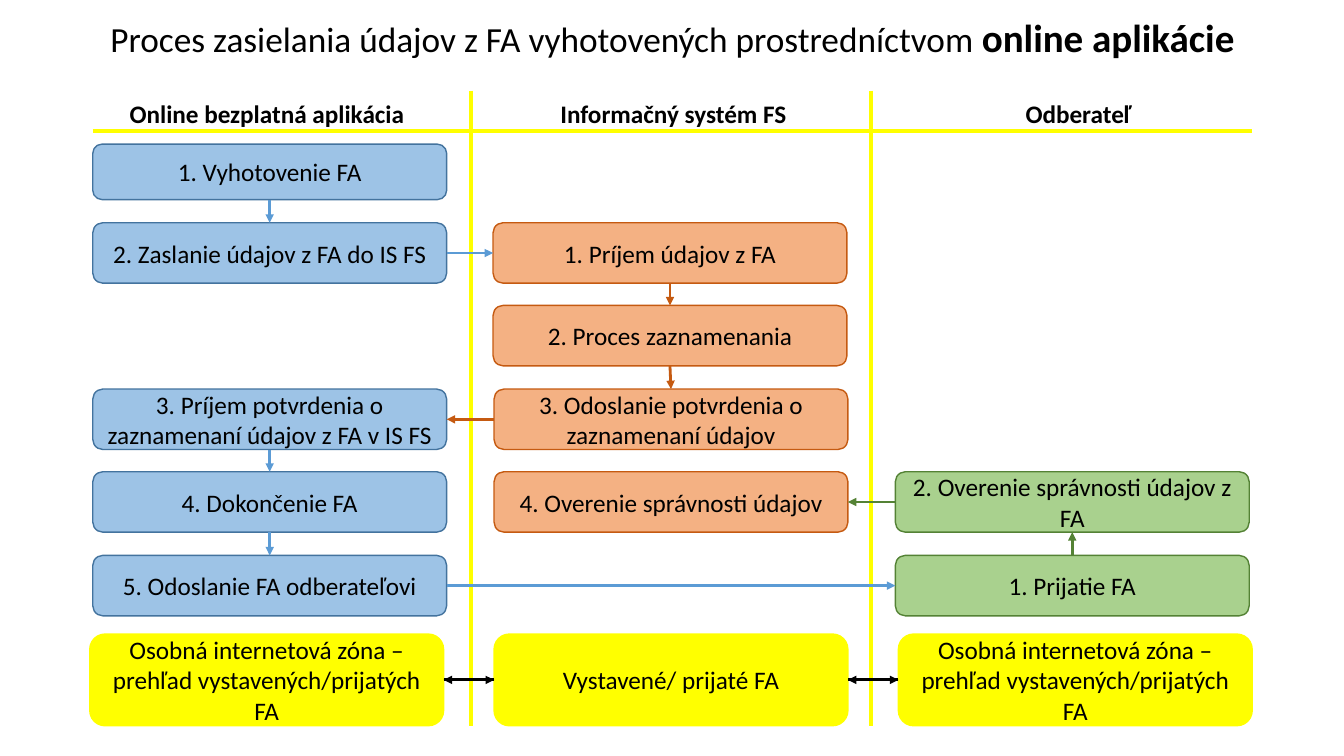
from lxml import etree
from pptx import Presentation
from pptx import util as u
from pptx.dml.color import RGBColor
from pptx.enum import shapes, text
from pptx.oxml.ns import qn

PX = 9144  # 100 px to the inch
FONT = "Calibri"
HEX = {
    "black": "000000", "yellow": "FFFF00",
    "blue": "9DC3E6", "navy": "43739E", "sky": "5B9BD5",
    "peach": "F4B183", "rust": "C55A11",
    "lime": "A9D18E", "green": "548235",
}


def style(font, size, bold=None):
    font.name, font.size, font.bold = FONT, u.Pt(size), bold
    font.color.rgb = RGBColor.from_string(HEX["black"])


def draw(ends, hue, width):
    """Add a straight connector without a shadow."""
    line = slide.shapes.add_connector(
        shapes.MSO_CONNECTOR.STRAIGHT, *(n * PX for n in ends))
    line.line.color.rgb = RGBColor.from_string(HEX[hue])
    line.line.width = u.Pt(width)
    etree.SubElement(line._element.spPr, qn("a:effectLst"))
    return line


deck = Presentation()
deck.slide_width, deck.slide_height = 1333 * PX, 750 * PX
slide = deck.slides.add_slide(deck.slide_layouts[5])

# Title
title = slide.shapes.title
title.left, title.top, title.width, title.height = (
    n * PX for n in (92, 5, 1150, 70))
frame = title.text_frame
frame.auto_size = text.MSO_AUTO_SIZE.NONE
frame.vertical_anchor = text.MSO_ANCHOR.MIDDLE
para = frame.paragraphs[0]
para.alignment = text.PP_ALIGN.CENTER
para.line_spacing = 0.9
for words, size, bold in (
        ("Proces zasielania údajov z FA vyhotovených prostredníctvom ", 25.2, False),
        ("online aplikácie", 27.9, True)):
    run = para.add_run()
    run.text = words
    style(run.font, size, bold)

# Boxes: key, left, top, height, fill, outline, wording
ZONE = "Osobná internetová zóna – prehľad vystavených/prijatých FA"
ROWS = [221, 303, 386, 468, 551]
BOXES = [
    ("make", 92, 143, 55, "blue", "navy", "1. Vyhotovenie FA"),
    ("send", 92, ROWS[0], 60, "blue", "navy", "2. Zaslanie údajov z FA do IS FS"),
    ("reply", 92, ROWS[2], 60, "blue", "navy",
     "3. Príjem potvrdenia o zaznamenaní údajov z FA v IS FS"),
    ("done", 92, ROWS[3], 60, "blue", "navy", "4. Dokončenie FA"),
    ("post", 92, ROWS[4], 60, "blue", "navy", "5. Odoslanie FA odberateľovi"),
    ("intake", 489, ROWS[0], 60, "peach", "rust", "1. Príjem údajov z FA"),
    ("record", 489, ROWS[1], 60, "peach", "rust", "2. Proces zaznamenania"),
    ("confirm", 490, ROWS[2], 60, "peach", "rust",
     "3. Odoslanie potvrdenia o zaznamenaní údajov"),
    ("verify", 490, ROWS[3], 60, "peach", "rust", "4. Overenie správnosti údajov"),
    ("check", 888, ROWS[3], 60, "lime", "green", "2. Overenie správnosti údajov z FA"),
    ("get", 888, ROWS[4], 60, "lime", "green", "1. Prijatie FA"),
    ("seller", 89, 629, 91, "yellow", "yellow", ZONE),
    ("lists", 490, 629, 91, "yellow", "yellow", "Vystavené/ prijaté FA"),
    ("buyer", 891, 629, 91, "yellow", "yellow", ZONE),
]
boxes = {}
for key, left, top, height, fill, edge, words in BOXES:
    box = slide.shapes.add_shape(
        shapes.MSO_SHAPE.FLOWCHART_ALTERNATE_PROCESS,
        left * PX, top * PX, 351 * PX, height * PX)
    box.shadow.inherit = False
    box.fill.solid()
    box.fill.fore_color.rgb = RGBColor.from_string(HEX[fill])
    box.line.color.rgb = RGBColor.from_string(HEX[edge])
    box.line.width = u.Pt(1)
    frame = box.text_frame
    frame.word_wrap = True
    frame.vertical_anchor = text.MSO_ANCHOR.MIDDLE
    para = frame.paragraphs[0]
    para.text = words
    para.alignment = text.PP_ALIGN.CENTER
    style(para.font, 18)
    boxes[key] = box

# Column headings on centred tab stops
head = slide.shapes.add_textbox(*(n * PX for n in (89, 93, 1150, 40)))
head.text_frame.word_wrap = True
para = head.text_frame.paragraphs[0]
para.text = "\tOnline bezplatná aplikácia\tInformačný systém FS\tOdberateľ"
tabs = etree.SubElement(para._p.get_or_add_pPr(), qn("a:tabLst"))
for stop in (166, 569, 971):
    etree.SubElement(tabs, qn("a:tab"), pos=str(stop * PX), algn="ctr")
style(para.font, 18, True)

# Column rules
for ends in ((92, 130, 1242, 130), (467, 90, 467, 720), (864, 90, 864, 720)):
    draw(ends, "yellow", 3)

# Arrows: from box and side, to box and side
TOP, LEFT, BOTTOM, RIGHT = range(4)
LINKS = [
    ("make", BOTTOM, "send", TOP, "sky"),
    ("send", RIGHT, "intake", LEFT, "sky"),
    ("intake", BOTTOM, "record", TOP, "rust"),
    ("record", BOTTOM, "confirm", TOP, "rust"),
    ("confirm", LEFT, "reply", RIGHT, "rust"),
    ("reply", BOTTOM, "done", TOP, "sky"),
    ("done", BOTTOM, "post", TOP, "sky"),
    ("post", RIGHT, "get", LEFT, "sky"),
    ("get", TOP, "check", BOTTOM, "green"),
    ("check", LEFT, "verify", RIGHT, "green"),
    ("seller", RIGHT, "lists", LEFT, "black"),
    ("lists", RIGHT, "buyer", LEFT, "black"),
    ("lists", LEFT, "seller", RIGHT, "black"),
    ("buyer", LEFT, "lists", RIGHT, "black"),
]
for start, out, end, into, hue in LINKS:
    arrow = draw((0, 0, 0, 0), hue, 2)
    arrow.begin_connect(boxes[start], out)
    arrow.end_connect(boxes[end], into)
    etree.SubElement(arrow.line._get_or_add_ln(), qn("a:tailEnd"), type="triangle")

deck.save("out.pptx")
